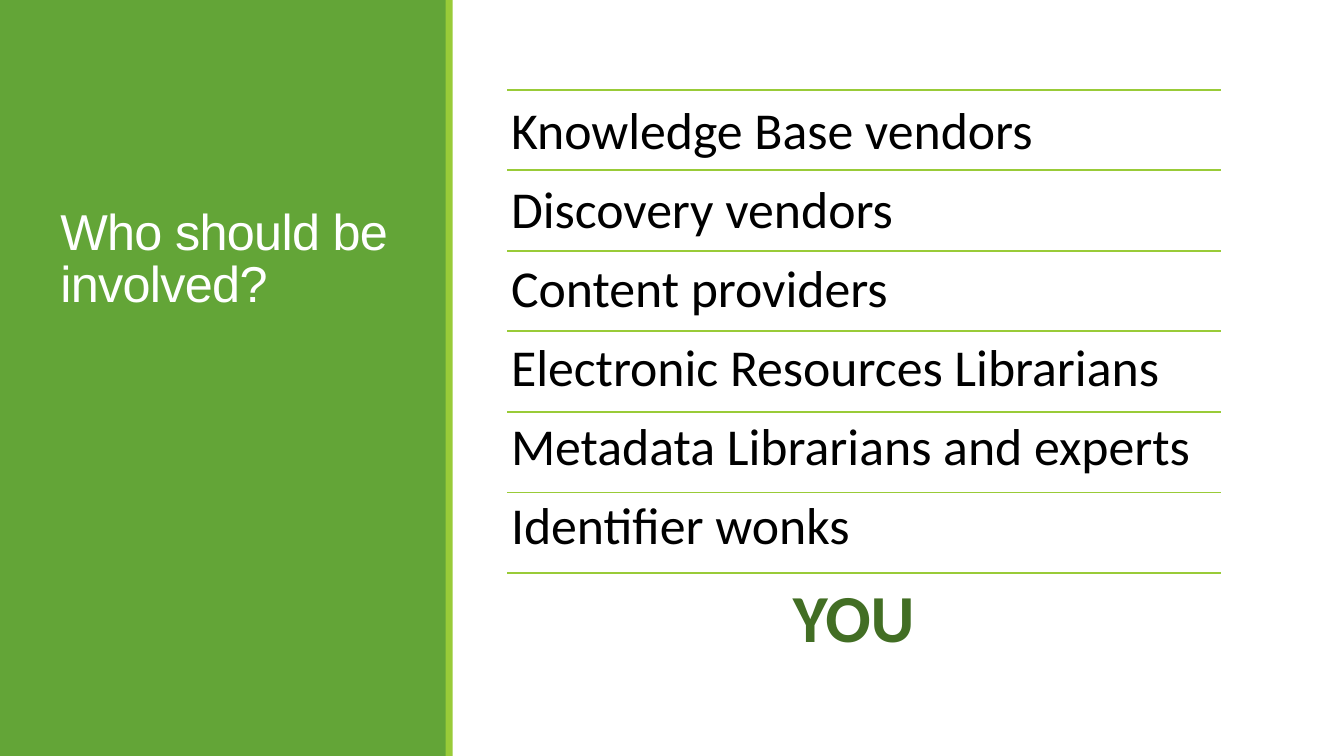
from lxml import etree
from pptx import Presentation
from pptx.dml.color import RGBColor
from pptx.enum.shapes import MSO_CONNECTOR, MSO_SHAPE
from pptx.enum.text import MSO_ANCHOR, PP_ALIGN
from pptx.oxml.ns import qn
from pptx.util import Cm, Pt

RECT = MSO_SHAPE.RECTANGLE
STRAIGHT = MSO_CONNECTOR.STRAIGHT
TOP, BOTTOM = MSO_ANCHOR.TOP, MSO_ANCHOR.BOTTOM
LEFT, CENTER = PP_ALIGN.LEFT, PP_ALIGN.CENTER

GREEN, LIME, DARK_GREEN = "63A537", "99CB38", "426E24"
WHITE, BLACK = "FFFFFF", "000000"

GROUPS = [
    "Knowledge Base vendors",
    "Discovery vendors",
    "Content providers",
    "Electronic Resources Librarians",
    "Metadata Librarians and experts",
    "Identifier wonks",
]
LIST_LEFT, LIST_TOP, LIST_WIDTH = 12.5, 2.26, 18.01
ROW_PITCH, ROW_HEIGHT = 1.99, 1.5
RULE_LEFT, RULE_RIGHT, RULE_PITCH = 12.78, 30.76, 2.03


def rgb(color):
    return RGBColor.from_string(color)


def add_band(s, left, width, color):
    """Draw a full-height vertical band."""
    sp = s.shapes.add_shape(RECT, Cm(left), 0, Cm(width), Cm(19.05))
    sp.shadow.inherit = False
    sp.fill.solid()
    sp.fill.fore_color.rgb = rgb(color)
    sp.line.fill.background()


def add_text(s, box, text, font, size, color, margins,
             bold=False, align=LEFT, anchor=TOP, line_spacing=0.9):
    """Add one wrapped paragraph; box and margins (x, y) are in cm."""
    sp = s.shapes.add_textbox(*map(Cm, box))
    tf = sp.text_frame
    tf.word_wrap = True
    tf.vertical_anchor = anchor
    tf.margin_left = tf.margin_right = Cm(margins[0])
    tf.margin_top = tf.margin_bottom = Cm(margins[1])
    p = tf.paragraphs[0]
    p.text = text
    p.alignment = align
    p.line_spacing = line_spacing
    p.font.name = font
    p.font.size = Pt(size)
    p.font.bold = bold
    p.font.color.rgb = rgb(color)
    return p


def add_rule(s, y):
    line = s.shapes.add_connector(
        STRAIGHT, Cm(RULE_LEFT), Cm(y), Cm(RULE_RIGHT), Cm(y))
    line.line.color.rgb = rgb(LIME)
    line.line.width = Pt(1.25)
    etree.SubElement(line._element.spPr, qn("a:effectLst"))


def add_title(s, text):
    p = add_text(s, (1.27, 1.65, 8.89, 6.35), text, "Arial", 36, WHITE,
                 (0.25, 0.13), anchor=BOTTOM, line_spacing=0.85)
    # Character spacing in hundredths of a point
    p.runs[0].font._element.set("spc", "-50")


def add_group_list(s):
    for i, group in enumerate(GROUPS):
        box = (LIST_LEFT, LIST_TOP + i * ROW_PITCH, LIST_WIDTH, ROW_HEIGHT)
        add_text(s, box, group, "Calibri", 37, BLACK, (0.38, 0.38))
    for i in range(len(GROUPS) + 1):
        add_rule(s, LIST_TOP + i * RULE_PITCH)


def main():
    prs = Presentation()
    prs.slide_width, prs.slide_height = Cm(33.87), Cm(19.05)
    s = prs.slides.add_slide(prs.slide_layouts[6])
    add_band(s, 0, 11.25, GREEN)
    add_band(s, 11.23, 0.18, LIME)
    add_title(s, "Who should be involved?")
    add_text(s, (LIST_LEFT, 14.22, 18.03, 2.72), "YOU", "Calibri", 48,
             DARK_GREEN, (0.5, 0.5), bold=True, align=CENTER)
    add_group_list(s)
    prs.save("out.pptx")


if __name__ == "__main__":
    main()
